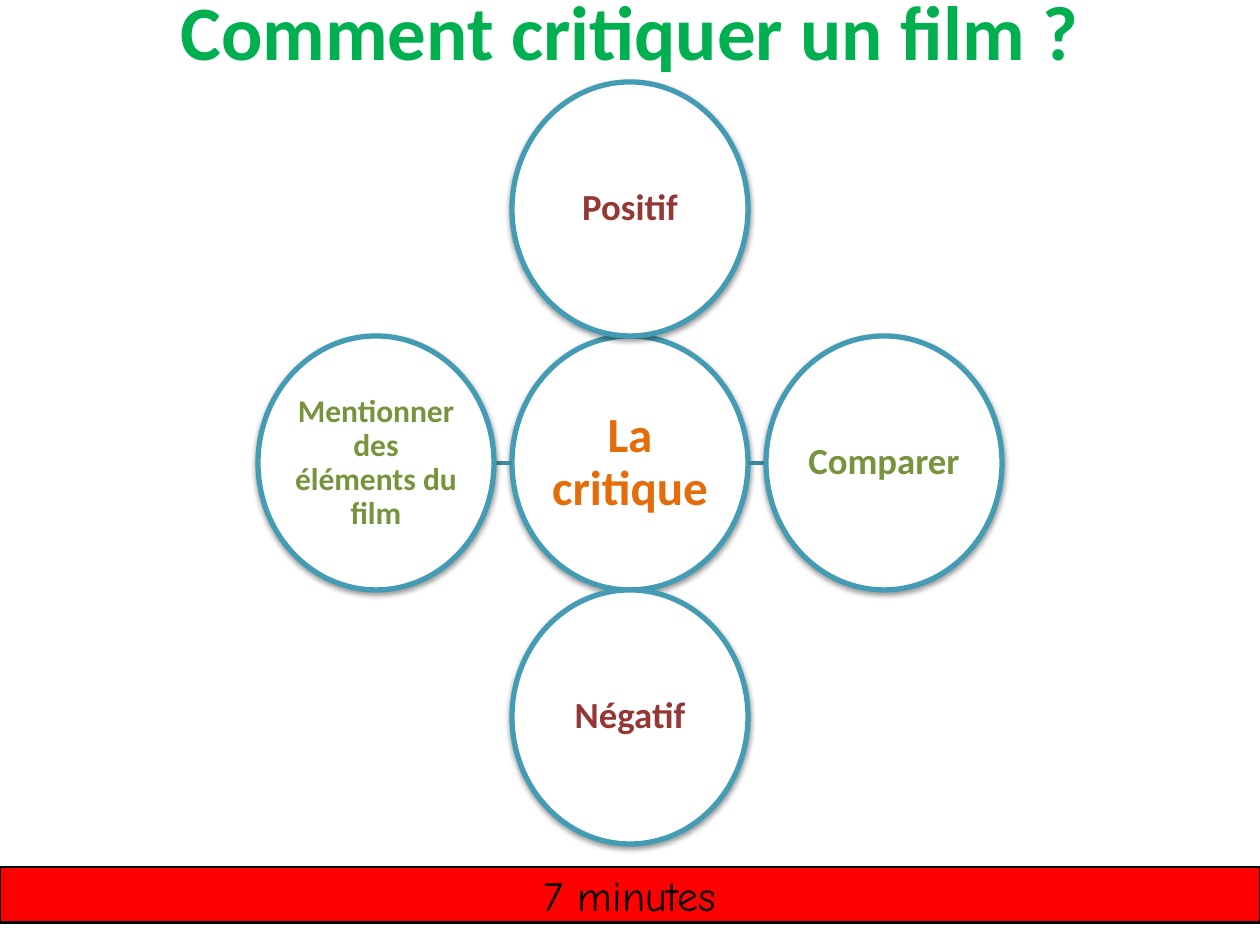
from lxml import etree
from pptx import Presentation
from pptx.dml.color import RGBColor
from pptx.enum.shapes import MSO_CONNECTOR as Connector, MSO_SHAPE as Shape
from pptx.enum.text import MSO_ANCHOR as Anchor, PP_ALIGN as Align
from pptx.oxml import parse_xml
from pptx.oxml.ns import nsdecls, qn
from pptx.util import Emu, Pt

SCALE = 914400 / 126  # EMU in one px

GREEN = RGBColor(0x00, 0xB0, 0x50)
ORANGE = RGBColor(0xE4, 0x6C, 0x0A)
MAROON = RGBColor(0x95, 0x37, 0x35)
OLIVE = RGBColor(0x77, 0x93, 0x3C)
TEAL = RGBColor(0x44, 0x9C, 0xB4)
DARK_TEAL = RGBColor(0x3C, 0x8A, 0x9F)
BLUE = RGBColor(0x4F, 0x81, 0xBD)
RED = RGBColor(0xFF, 0x00, 0x00)
WHITE = RGBColor(0xFF, 0xFF, 0xFF)
BLACK = RGBColor(0x00, 0x00, 0x00)

SHADOW = (
    f'<a:effectLst {nsdecls("a")}><a:outerShdw blurRad="39370" dist="20320" '
    'dir="5400000" rotWithShape="0"><a:srgbClr val="000000">'
    '<a:alpha val="38000"/></a:srgbClr></a:outerShdw></a:effectLst>'
)


def px(length):
    return Emu(round(length * SCALE))


def write(shape, text, size, color, font="Calibri", bold=True, spacing=None,
          margin=None, wrap=True):
    frame = shape.text_frame
    frame.word_wrap = wrap
    frame.vertical_anchor = Anchor.MIDDLE
    if margin is not None:
        frame.margin_left = frame.margin_right = px(margin)
        frame.margin_top = frame.margin_bottom = px(margin)
    paragraph = frame.paragraphs[0]
    paragraph.alignment = Align.CENTER
    if spacing:
        paragraph.line_spacing = spacing
    run = paragraph.add_run()
    run.text = text
    run.font.name = font
    run.font.size = Pt(size)
    run.font.bold = bold
    run.font.color.rgb = color


class SlideBuilder:
    def __init__(self, slide):
        self.slide = slide

    def title(self, text, left, top, width, height):
        box = self.slide.shapes.add_textbox(px(left), px(top), px(width), px(height))
        write(box, text, 44, GREEN)

    def shape(self, kind, left, top, width, height, fill, line, line_width):
        shape = self.slide.shapes.add_shape(
            kind, px(left), px(top), px(width), px(height))
        shape.shadow.inherit = False
        shape.fill.solid()
        shape.fill.fore_color.rgb = fill
        shape.line.color.rgb = line
        shape.line.width = Pt(line_width)
        return shape

    def circle(self, text, center_x, center_y, width, height, size, color):
        circle = self.shape(Shape.OVAL, center_x - width // 2, center_y - height // 2,
                            width, height, WHITE, TEAL, 3)
        properties = circle.element.spPr
        properties.replace(properties.find(qn("a:effectLst")), parse_xml(SHADOW))
        write(circle, text, size, color, spacing=0.9, margin=2)

    def link(self, start_x, end_x, y):
        link = self.slide.shapes.add_connector(
            Connector.STRAIGHT, px(start_x), px(y), px(end_x), px(y))
        link.line.color.rgb = DARK_TEAL
        link.line.width = Pt(2)
        etree.SubElement(link.element.spPr, qn("a:effectLst"))

    def bar(self, left, top, width, height, fill):
        return self.shape(Shape.RECTANGLE, left, top, width, height, fill, BLACK, 0.75)


def main():
    presentation = Presentation()
    presentation.slide_width = px(1260)
    presentation.slide_height = px(945)
    builder = SlideBuilder(presentation.slides.add_slide(presentation.slide_layouts[6]))

    builder.title("Comment critiquer un film ?", 63, -49, 1134, 157)

    # Hub with four satellites, one step away in each direction
    center_x, center_y, step = 630, 463, 254
    width, height = 236, 254
    circles = [
        ("La critique", 0, 0, 28, ORANGE),
        ("Positif", 0, -1, 21, MAROON),
        ("Comparer", 1, 0, 21, OLIVE),
        ("Négatif", 0, 1, 21, MAROON),
        ("Mentionner des éléments du film", -1, 0, 18, OLIVE),
    ]
    for text, column, row, size, color in circles:
        if column:
            builder.link(center_x + column * width // 2,
                         center_x + column * (step - width // 2), center_y)
        builder.circle(text, center_x + column * step, center_y + row * step,
                       width, height, size, color)

    # Time banner, with a slightly taller bar behind it
    builder.bar(0, 867, 1260, 56, BLUE)
    banner = builder.bar(0, 867, 1260, 55, RED)
    write(banner, "7 minutes", 24, BLACK, font="Comic Neue", bold=False, wrap=False)

    presentation.save("out.pptx")


if __name__ == "__main__":
    main()
